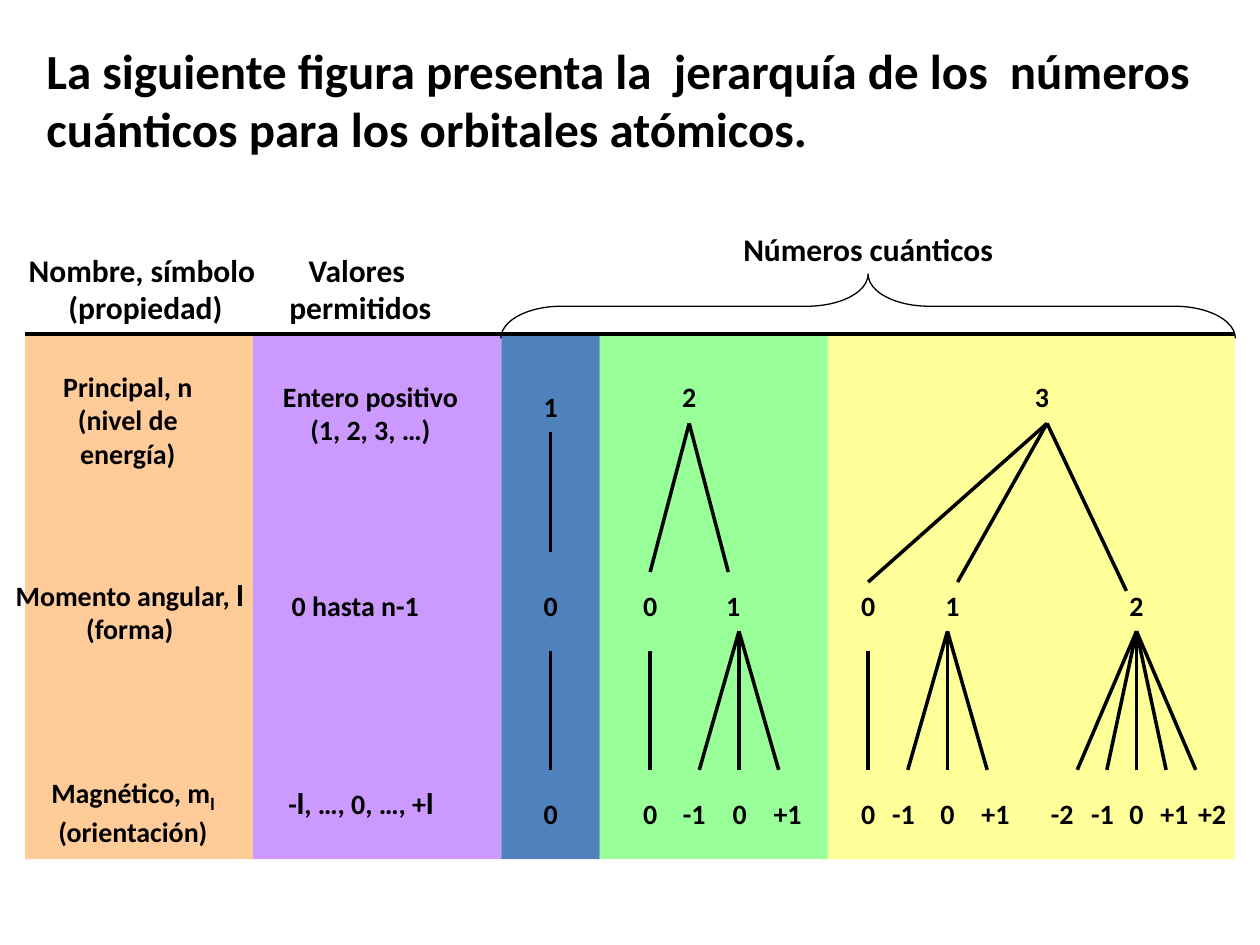
"""Builds a slide with the hierarchy of quantum numbers for atomic orbitals."""
from lxml import etree
from pptx import Presentation
from pptx.dml.color import RGBColor
from pptx.enum.shapes import MSO_CONNECTOR, MSO_SHAPE
from pptx.enum.text import MSO_ANCHOR, MSO_AUTO_SIZE, PP_ALIGN
from pptx.oxml.ns import qn
from pptx.util import Inches, Pt

RECTANGLE, BRACE = MSO_SHAPE.RECTANGLE, MSO_SHAPE.RIGHT_BRACE
STRAIGHT = MSO_CONNECTOR.STRAIGHT
LEFT, CENTER = PP_ALIGN.LEFT, PP_ALIGN.CENTER
TOP, MIDDLE = MSO_ANCHOR.TOP, MSO_ANCHOR.MIDDLE
GROW, FIXED = MSO_AUTO_SIZE.SHAPE_TO_FIT_TEXT, MSO_AUTO_SIZE.NONE

COLORS = {
    "ink": "000000",
    "name": "FFCC99",
    "values": "CC99FF",
    "n1": "4F81BD",
    "n2": "99FF99",
    "n3": "FFFF99",
}
SYMBOL, SUBSCRIPT = "symbol", "subscript"


class Board:
    """Style and current slide, measured on a grid of 100 columns by 75 rows."""

    font, symbol_font = "Calibri", "Roboto"
    size, heading_size, title_size = 16, 18, 28

    def __init__(self, slide, width, height):
        self.shapes = slide.shapes
        self.column, self.row = width / 100, height / 75

    def place(self, left, top, width, height):
        return (round(left * self.column), round(top * self.row),
                round(width * self.column), round(height * self.row))

    def color(self, name):
        return RGBColor.from_string(COLORS[name])

    def band(self, color, left, right, top, bottom):
        band = self.shapes.add_shape(
            RECTANGLE, *self.place(left, top, right - left, bottom - top))
        band.shadow.inherit = False
        band.fill.solid()
        band.fill.fore_color.rgb = self.color(color)
        band.line.fill.background()

    def brace(self, center, middle, span, depth):
        brace = self.shapes.add_shape(BRACE, *self.place(
            center - depth / 2, middle - span / 2, depth, span))
        brace.rotation = 270
        brace.adjustments[0] = 0.948
        brace.shadow.inherit = False
        brace.fill.background()
        brace.line.color.rgb = self.color("ink")
        brace.line.width = Pt(0.75)

    def line(self, x1, y1, x2, y2):
        line = self.shapes.add_connector(STRAIGHT, *self.place(x1, y1, x2, y2))
        line.line.color.rgb = self.color("ink")
        line.line.width = Pt(2)
        etree.SubElement(line._element.spPr, qn("a:effectLst"))

    def fan(self, x, top, ends, bottom):
        for end in ends:
            self.line(x, top, end, bottom)

    def text(self, lines, left, top, width, height, size=None, wrap=False,
             align=CENTER, anchor=TOP, fit=GROW):
        frame = self.shapes.add_textbox(
            *self.place(left, top, width, height)).text_frame
        frame.word_wrap, frame.auto_size = wrap, fit
        frame.vertical_anchor = anchor
        for index, parts in enumerate(lines):
            paragraph = frame.add_paragraph() if index else frame.paragraphs[0]
            paragraph.alignment = align
            for part in [parts] if isinstance(parts, str) else parts:
                content, kind = (part, None) if isinstance(part, str) else part
                run = paragraph.add_run()
                run.text = content
                run.font.name = self.symbol_font if kind else self.font
                run.font.size = Pt(size or self.size)
                run.font.bold = True
                run.font.color.rgb = self.color("ink")
                if kind == SUBSCRIPT:
                    run.font._element.set("baseline", "-25000")

    def number(self, label, center, top):
        width = 3.2 if len(label) == 1 else 4.2
        self.text([label], center - width / 2, top, width, 3.7)


BANDS = [("name", 2, 20.1), ("values", 20.1, 39.8), ("n3", 65.7, 98),
         ("n2", 47.6, 65.7), ("n1", 39.8, 47.6)]

HEADINGS = [
    (["Nombre, símbolo ", "(propiedad)"], 0, 19.4, 23.1, 7),
    (["Valores ", "permitidos"], 21.2, 19.4, 14.8, 7),
    (["Números cuánticos"], 56.3, 17.8, 25.2, 4),
]
ell = ("l", SYMBOL)
DESCRIPTIONS = [
    (["Principal, n", "(nivel de energía)"], 2, 28.8, 16.3, 9.1),
    ([["Momento angular, ", ell], "(forma)"], 0, 45.4, 20.6, 9),
    ([["Magnético, m", ("l", SUBSCRIPT)], "(orientación)"], 2.3, 61.1, 16.5, 6.4),
    (["Entero positivo", "(1, 2, 3, …)"], 20.3, 29.6, 18.2, 6.4),
    (["0 hasta n-1"], 21.4, 46.2, 13.6, 3.7),
    ([["-", ell, ", …, 0, …, +", ell]], 20.9, 61.9, 15.5, 3.7),
]
PRINCIPAL = [("1", 43.7, 30.4), ("2", 54.7, 29.6), ("3", 82.7, 29.6)]
ANGULAR = [("0", 43.7), ("0", 51.6), ("1", 58.2),
           ("0", 68.9), ("1", 75.6), ("2", 90.2)]
MAGNETIC = [("0", 43.7), ("0", 51.6), ("-1", 55.1), ("0", 58.7), ("+1", 62.5),
            ("0", 68.9), ("-1", 71.7), ("0", 75.2), ("+1", 79),
            ("-2", 84.3), ("-1", 87.5), ("0", 90.2), ("+1", 93.2), ("+2", 96.2)]
FANS = [
    (43.7, 34.3, [43.7], 43.8),
    (54.7, 33.6, [51.6, 57.8], 45.4),
    (83.1, 33.6, [68.9, 76], 46.2),
    (83.1, 33.6, [89.4], 46.9),
]
SINGLES = [43.7, 51.6, 68.9]
SPLITS = [(58.65, 3.15, 1), (75.2, 3.15, 1), (90.2, 2.35, 2)]


def main():
    """Draw the whole slide and save it."""
    deck = Presentation()
    deck.slide_width, deck.slide_height = Inches(10), Inches(7.5)
    slide = deck.slides.add_slide(deck.slide_layouts[6])
    board = Board(slide, deck.slide_width, deck.slide_height)

    for color, left, right in BANDS:
        board.band(color, left, right, 26.5, 68.2)
    board.text(["La siguiente figura presenta la  jerarquía de los  números "
                "cuánticos para los orbitales atómicos."],
               2.7, 2.1, 97.3, 11.5, size=board.title_size, wrap=True,
               align=LEFT, anchor=MIDDLE, fit=FIXED)
    board.line(2, 26.5, 98, 26.5)
    for heading in HEADINGS:
        board.text(*heading, size=board.heading_size)
    for description in DESCRIPTIONS:
        board.text(*description, wrap=description is DESCRIPTIONS[0])

    for label, center, top in PRINCIPAL:
        board.number(label, center, top)
    for label, center in ANGULAR:
        board.number(label, center, 46.2)
    for label, center in MAGNETIC:
        board.number(label, center, 62.7)

    for fan in FANS:
        board.fan(*fan)
    for x in SINGLES:
        board.line(x, 51.7, x, 61.1)
    for x, step, reach in SPLITS:
        ends = [x + step * m for m in range(-reach, reach + 1)]
        board.fan(x, 50.1, ends, 61.1)
    board.brace(68.9, 24.3, 58.3, 5.1)
    deck.save("out.pptx")


if __name__ == "__main__":
    main()
